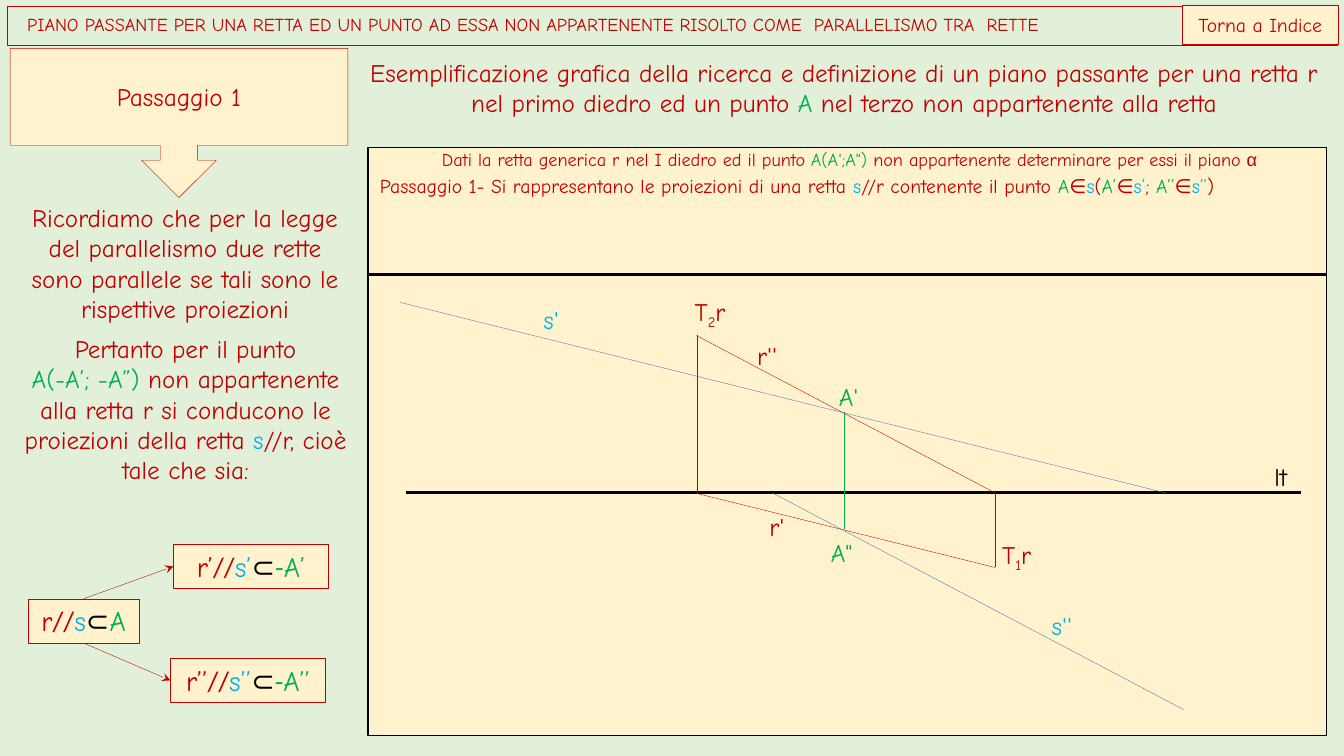
import pptx
import pptx.util
import pptx.dml.color
import pptx.enum.shapes
import pptx.enum.text
import pptx.oxml.ns
from lxml import etree

Inches, Pt = pptx.util.Inches, pptx.util.Pt
RGBColor = pptx.dml.color.RGBColor
MSO_SHAPE = pptx.enum.shapes.MSO_SHAPE
ANCHOR, ALIGN = pptx.enum.text.MSO_ANCHOR, pptx.enum.text.PP_ALIGN
FIT = pptx.enum.text.MSO_AUTO_SIZE

RED = RGBColor(0xC0, 0x00, 0x00)
GREEN = RGBColor(0x00, 0xB0, 0x50)
CYAN = RGBColor(0x00, 0xB0, 0xF0)
BLUE = RGBColor(0x44, 0x72, 0xC4)
BLACK = RGBColor(0x00, 0x00, 0x00)
CREAM = RGBColor(0xFF, 0xF2, 0xCC)
PALE_GREEN = RGBColor(0xE2, 0xF0, 0xD9)
FONT = "Comic Neue"

# Content: a paragraph is a list of (text, colour[, font]) runs
HEADER = [[("PIANO PASSANTE PER UNA RETTA ED UN PUNTO AD ESSA NON APPARTENENTE "
            "RISOLTO COME  PARALLELISMO TRA  RETTE", RED)]]
INDEX = [[("Torna a Indice", RED)]]
STEP = [[("Passaggio 1", RED)]]

# (left, top, width, height), size, alignment, paragraphs
TEXTS = [
    ((3.45, 0.52, 9.84, 0.71), 18, ALIGN.CENTER, [[
        ("Esemplificazione grafica della ricerca e definizione di un piano passante "
         "per una retta r nel primo diedro ed un punto ", RED),
        ("A ", GREEN), ("nel terzo non appartenente alla retta", RED)]]),
    ((0.1, 1.96, 3.47, 1.31), 18, ALIGN.CENTER, [[
        ("Ricordiamo che per la legge del parallelismo due rette sono parallele "
         "se tali sono le rispettive proiezioni", RED)]]),
    ((0.13, 3.26, 3.42, 1.92), 18, ALIGN.CENTER, [
        [("Pertanto per il punto", RED)],
        [("A(-A’; -A”) ", GREEN),
         ("non appartenente alla retta r si conducono le proiezioni della retta ", RED),
         ("s", CYAN), ("//r, cioè tale che sia:", RED)]]),
    ((3.67, 1.68, 9.52, 0.34), 14, ALIGN.LEFT, [[
        ("Passaggio 1- Si rappresentano le proiezioni di una retta", RED), (" s", CYAN),
        ("//r contenente il punto ", RED), ("A", GREEN), ("∈", RED), ("s", CYAN),
        ("(", RED), ("A’", GREEN), ("∈", RED), ("s’", CYAN), ("; ", RED),
        ("A’’", GREEN), ("∈", RED), ("s’’", CYAN), (")", RED)]]),
]
GIVEN = [[("Dati la retta generica r nel I diedro ed il punto ", RED), ("A(A';A\") ", GREEN),
          ("non appartenente determinare per essi il piano ", RED), ("α", RED, "Arial")]]

# Relations: place, mark of the projection, sign before the point
RELATIONS = [
    ((0.28, 5.94, 1.1, 0.44), "", ""),
    ((1.72, 5.4, 1.54, 0.44), "’", "-"),
    ((1.69, 6.53, 1.54, 0.44), "’’", "-"),
]

# Drawing
PANEL = (3.65, 1.46, 9.51, 5.84)
GROUND_Y = 4.89
LINES = [  # start, end, colour, width
    ((3.65, 2.72), (13.16, 2.72), BLACK, 0),
    ((4.03, GROUND_Y), (12.9, GROUND_Y), BLACK, 0),
    ((6.91, 3.33), (9.87, GROUND_Y), RED, 0.25),
    ((6.89, GROUND_Y), (9.87, 5.63), RED, 0.25),
    ((9.87, GROUND_Y), (9.87, 5.63), RED, 0.25),
    ((6.91, GROUND_Y), (6.91, 3.32), RED, 0.25),
    ((8.37, 4.09), (8.37, 5.25), GREEN, 0.25),
    ((7.66, GROUND_Y), (11.74, 7.04), BLUE, 0.25),
    ((3.97, 3), (11.56, GROUND_Y), BLUE, 0.25),
]
LABELS = [  # text, left, top, width, colour
    ("lt", 12.64, 4.58, 0.29, BLACK),
    ("A'", 8.32, 3.78, 0.28, GREEN),
    ("A\"", 8.24, 5.33, 0.29, GREEN),
    ("r'", 7.63, 5.07, 0.22, RED),
    ("r''", 7.51, 3.38, 0.32, RED),
    ("s'", 5.39, 3.02, 0.22, CYAN),
    ("s''", 10.43, 6.06, 0.32, CYAN),
]
TRACES = [("1", 9.94, 5.35), ("2", 6.89, 2.94)]  # index, left, top

presentation = pptx.Presentation()
presentation.slide_width, presentation.slide_height = Inches(13.33), Inches(7.5)
slide = presentation.slides.add_slide(presentation.slide_layouts[5])
slide.background.fill.solid()
slide.background.fill.fore_color.rgb = PALE_GREEN


def write(shape, paragraphs, size, align=ALIGN.CENTER, anchor=ANCHOR.TOP, inset=True, wrap=True):
    frame = shape.text_frame
    frame.word_wrap = wrap
    frame.vertical_anchor = anchor
    if not inset:
        frame.margin_left = frame.margin_right = frame.margin_top = frame.margin_bottom = 0
    for number, runs in enumerate(paragraphs):
        paragraph = frame.add_paragraph() if number else frame.paragraphs[0]
        paragraph.alignment = align
        paragraph.font.size, paragraph.font.name = Pt(size), FONT
        paragraph.font.color.rgb = runs[0][1]
        for text, colour, *font in runs:
            run = paragraph.add_run()
            run.text = text
            if colour != runs[0][1]:
                run.font.color.rgb = colour
            if font:
                run.font.name = font[0]


def add_text(place, paragraphs, size, align=ALIGN.CENTER, inset=True, wrap=True):
    box = slide.shapes.add_textbox(*map(Inches, place))
    write(box, paragraphs, size, align, inset=inset, wrap=wrap)
    box.text_frame.auto_size = FIT.SHAPE_TO_FIT_TEXT
    return box


def add_panel(kind, place, colour=RED, width=0.25):
    panel = slide.shapes.add_shape(kind, *map(Inches, place))
    panel.shadow.inherit = False
    panel.fill.solid()
    panel.fill.fore_color.rgb = CREAM
    panel.line.color.rgb, panel.line.width = colour, Pt(width)
    return panel


def add_line(start, end, colour, width):
    line = slide.shapes.add_connector(pptx.enum.shapes.MSO_CONNECTOR.STRAIGHT,
                                      *map(Inches, start + end))
    line.line.color.rgb, line.line.width = colour, Pt(width)
    etree.SubElement(line._element.spPr, pptx.oxml.ns.qn("a:effectLst"))
    return line


# Header bar and index button
header = slide.shapes.title
header.left, header.top, header.width, header.height = map(Inches, (0.07, 0.06, 13.19, 0.39))
header.line.color.rgb, header.line.width = RED, Pt(0.25)
write(header, HEADER, 13, ALIGN.LEFT, ANCHOR.MIDDLE)
header.text_frame.auto_size = FIT.NONE
header.text_frame.margin_left = Inches(0.2)
header.text_frame.paragraphs[0].line_spacing = 0.9
index = add_panel(MSO_SHAPE.RECTANGLE, (11.73, 0.05, 1.54, 0.39))
write(index, INDEX, 14, anchor=ANCHOR.MIDDLE)

# Step callout
step = add_panel(MSO_SHAPE.DOWN_ARROW_CALLOUT, (0.1, 0.48, 3.35, 1.48))
write(step, STEP, 18, anchor=ANCHOR.MIDDLE)

# Drawing panel, lines and labels
add_panel(MSO_SHAPE.RECTANGLE, PANEL, BLACK, 0)
for drawn_line in LINES:
    add_line(*drawn_line)
for text, left, top, width, colour in LABELS:
    add_text((left, top, width, 0.3), [[(text, colour)]], 18, ALIGN.LEFT, False, False)
for number, left, top in TRACES:
    trace = add_text((left, top, 0.36, 0.3), [[("T", RED), (number, RED), ("r", RED)]],
                     18, ALIGN.LEFT, False, False)
    subscript = trace.text_frame.paragraphs[0].runs[1]
    subscript._r.get_or_add_rPr().set("baseline", "-25000")

# Explanations
for place, size, align, paragraphs in TEXTS:
    add_text(place, paragraphs, size, align)
add_text((3.67, 1.47, 9.51, 0.22), GIVEN, 13, inset=False)

# Relations, with arrows from the first to its projections
relations = []
for place, mark, sign in RELATIONS:
    relation = add_panel(MSO_SHAPE.RECTANGLE, place)
    runs = [("r" + mark, RED), ("//", RED, "Calibri"), ("s" + mark, CYAN),
            ("⊂", BLACK, "Calibri"), (sign, GREEN, "Calibri"), ("A" + mark, GREEN)]
    write(relation, [[run for run in runs if run[0]]], 20)
    relations.append(relation)
space, *projections = relations
for projection, side in zip(projections, (0, 2)):
    arrow = add_line((0, 0), (1, 1), RED, 0.25)
    arrow.begin_connect(space, side)
    arrow.end_connect(projection, 1)
    etree.SubElement(arrow.line._get_or_add_ln(), pptx.oxml.ns.qn("a:tailEnd"), type="stealth")

presentation.save("out.pptx")
